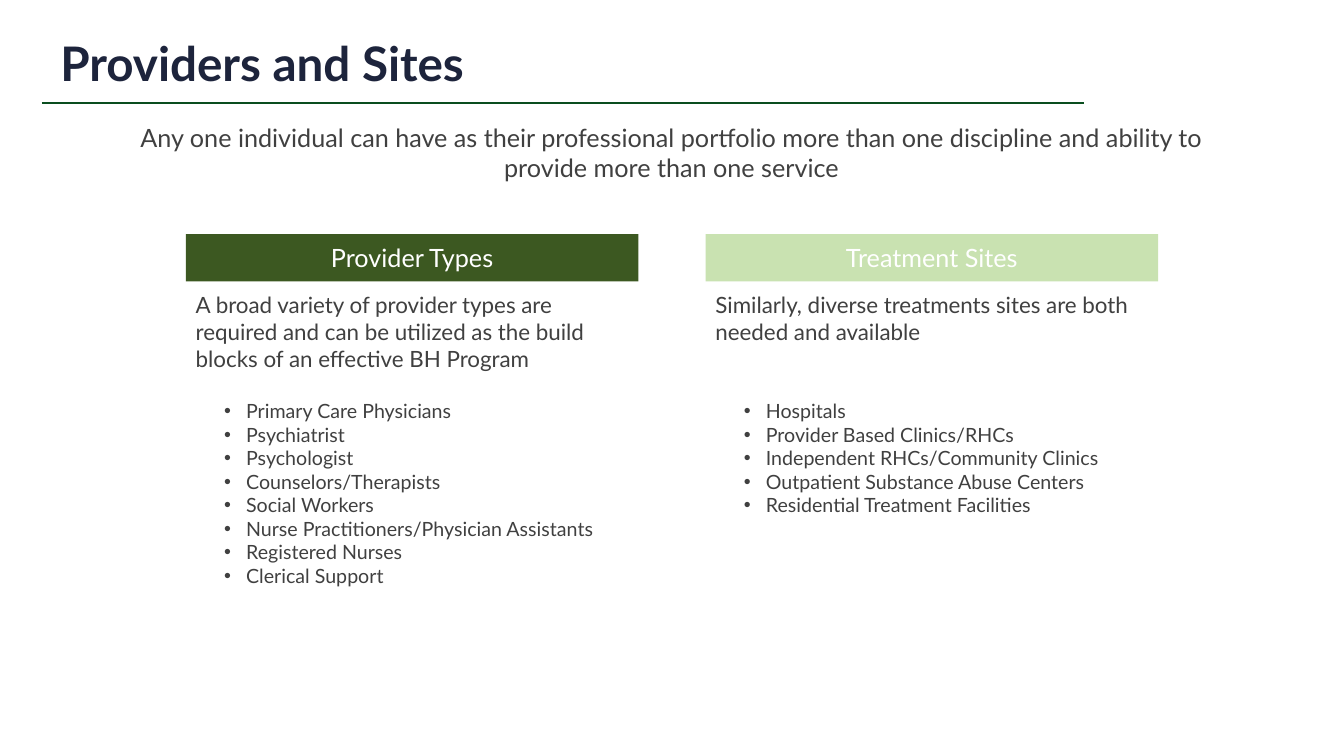
from lxml.etree import SubElement
from pptx import Presentation
from pptx.dml.color import RGBColor
from pptx.enum.shapes import MSO_CONNECTOR, MSO_SHAPE
from pptx.enum.text import MSO_ANCHOR, PP_ALIGN
from pptx.oxml.ns import qn
from pptx.util import Pt

PX = 9525
FONT = "Lato"
NAVY = RGBColor(0x1D, 0x24, 0x3C)
GREY = RGBColor(0x40, 0x40, 0x40)
WHITE = RGBColor(0xFF, 0xFF, 0xFF)
RULE_GREEN = RGBColor(0x0A, 0x4E, 0x1F)
DARK_GREEN = RGBColor(0x3C, 0x58, 0x21)
PALE_GREEN = RGBColor(0xC9, 0xE2, 0xB1)

COLUMN_WIDTH = 431
COLUMN_STEP = 495
LINE_16 = 19.2

COLUMNS = [
    ("Provider Types", DARK_GREEN,
     "A broad variety of provider types are required and can be utilized "
     "as the build blocks of an effective BH Program",
     1,
     ["Primary Care Physicians", "Psychiatrist", "Psychologist",
      "Counselors/Therapists", "Social Workers",
      "Nurse Practitioners/Physician Assistants", "Registered Nurses",
      "Clerical Support"]),
    ("Treatment Sites", PALE_GREEN,
     "Similarly, diverse treatments sites are both needed and available",
     2,
     ["Hospitals", "Provider Based Clinics/RHCs",
      "Independent RHCs/Community Clinics",
      "Outpatient Substance Abuse Centers",
      "Residential Treatment Facilities"]),
]


def scaled(*lengths):
    """Turn px lengths into EMU."""
    return [length * PX for length in lengths]


def write(paragraph, wording, size, color, bold=False, align=PP_ALIGN.LEFT):
    """Add one styled run to a paragraph."""
    paragraph.alignment = align
    run = paragraph.add_run()
    run.text = wording
    run.font.name = FONT
    run.font.size = Pt(size)
    run.font.bold = bold
    run.font.color.rgb = color


def add_text_frame(slide, left, top, width, height):
    """Add a wrapping text box and return its frame."""
    frame = slide.shapes.add_textbox(*scaled(left, top, width, height)).text_frame
    frame.word_wrap = True
    return frame


def add_bullet(paragraph):
    """Give a paragraph a round bullet and a hanging indent."""
    properties = paragraph._p.get_or_add_pPr()
    properties.set("marL", str(48 * PX))
    properties.set("indent", str(-21 * PX))
    SubElement(properties, qn("a:buFont"), typeface="Arial")
    SubElement(properties, qn("a:buChar"), char="•")


def add_heading(slide, left, top, width, height):
    """Place the title and the green rule beneath it."""
    title = add_text_frame(slide, left, top, width, height)
    title.vertical_anchor = MSO_ANCHOR.BOTTOM
    title.paragraphs[0].line_spacing = 0.9
    write(title.paragraphs[0], "Providers and Sites", 34, NAVY, bold=True)
    rule_top = top + height + 6
    rule = slide.shapes.add_connector(
        MSO_CONNECTOR.STRAIGHT,
        *scaled(left - 8, rule_top, left + width - 14, rule_top))
    rule.line.color.rgb = RULE_GREEN
    rule.line.width = Pt(1)
    SubElement(rule._element.spPr, qn("a:effectLst"))


def add_intro(slide, left, top, width, height):
    """Place the centred opening statement."""
    intro = add_text_frame(slide, left, top, width, height)
    write(intro.paragraphs[0],
          "Any one individual can have as their professional portfolio more "
          "than one discipline and ability to provide more than one service",
          18, GREY, align=PP_ALIGN.CENTER)


def add_column(slide, left, top, width, height, column):
    """Place a coloured header with its summary and bullet list."""
    heading, color, summary, gap_lines, entries = column
    header = slide.shapes.add_shape(
        MSO_SHAPE.RECTANGLE, *scaled(left, top, width, 45))
    header.shadow.inherit = False
    header.fill.solid()
    header.fill.fore_color.rgb = color
    header.line.fill.background()
    header.text_frame.vertical_anchor = MSO_ANCHOR.MIDDLE
    write(header.text_frame.paragraphs[0], heading, 18, WHITE,
          align=PP_ALIGN.CENTER)

    body = add_text_frame(slide, left, top + 50, width, height - 50)
    write(body.paragraphs[0], summary, 16, GREY)
    for position, entry in enumerate(entries):
        paragraph = body.add_paragraph()
        if position == 0:
            paragraph.space_before = Pt(gap_lines * LINE_16)
        add_bullet(paragraph)
        write(paragraph, entry, 14, GREY)


def main():
    """Build the slide and save it."""
    deck = Presentation()
    deck.slide_width, deck.slide_height = scaled(1280, 720)
    slide = deck.slides.add_slide(deck.slide_layouts[6])
    add_heading(slide, 48, 29, 998, 63)
    add_intro(slide, 115, 112, 1049, 68)
    for index, column in enumerate(COLUMNS):
        add_column(slide, 177 + index * COLUMN_STEP, 223, COLUMN_WIDTH, 344,
                   column)
    deck.save("out.pptx")


if __name__ == "__main__":
    main()
